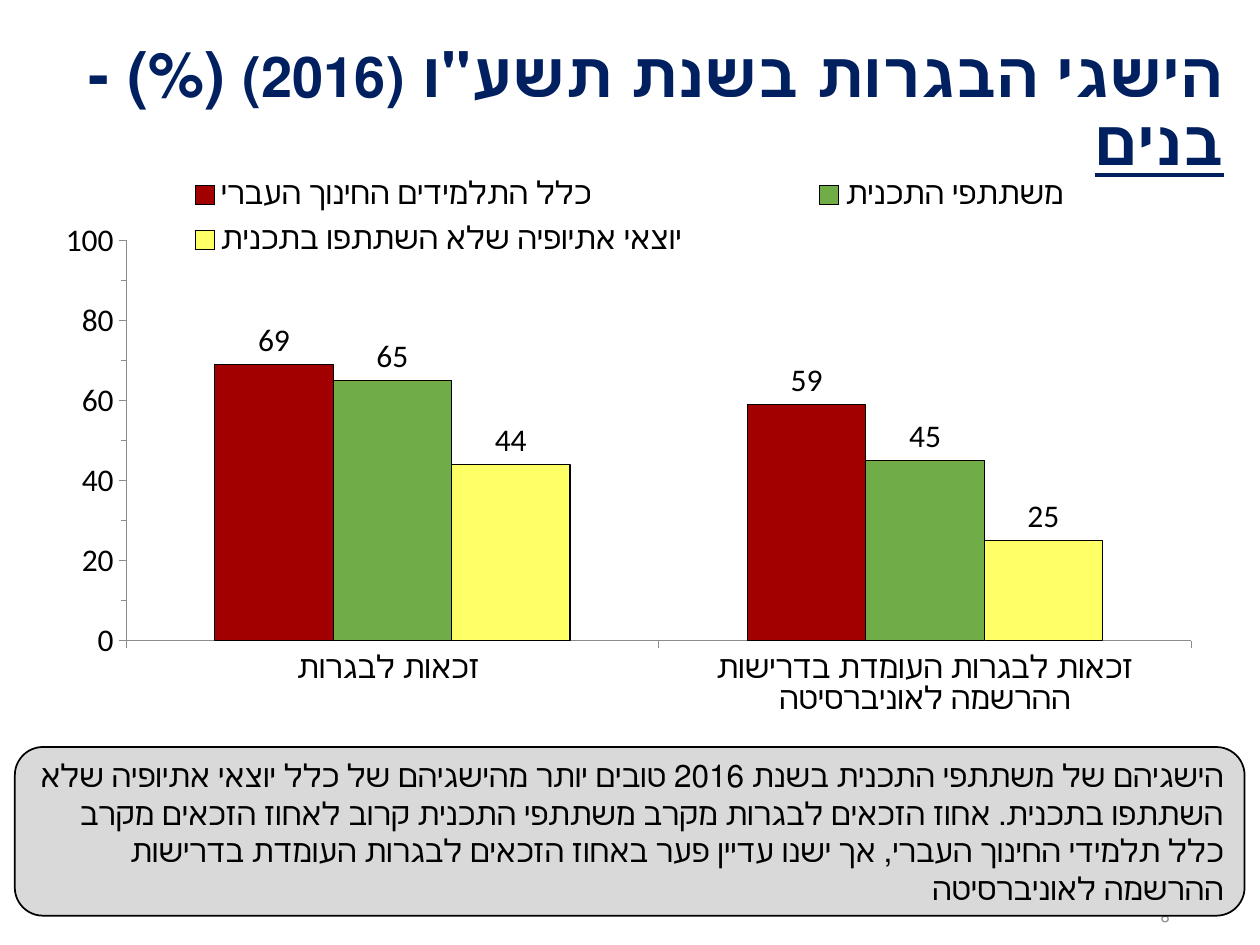
from pptx import Presentation
from pptx.chart.data import CategoryChartData
from pptx.dml.color import RGBColor
from pptx.enum import chart as charts, shapes, text
from pptx.oxml import parse_xml
from pptx.oxml.ns import nsdecls, qn
from pptx.util import Cm, Pt

COLORS = {"title": "002060", "ink": "000000", "axis": "8C8C8C", "number": "898989",
          "panel": "D9D9D9", "all": "A20000", "program": "70AD47", "others": "FFFF66"}

# Title runs: text, size, underlined
TITLE = [
    ("הישגי הבגרות בשנת תשע\"ו ", 36, False),
    ("(2016)", 32, False),
    (" (%) - ", 36, False),
    ("בנים", 36, True),
]
CATEGORIES = ["זכאות לבגרות ", "זכאות לבגרות העומדת בדרישות ההרשמה לאוניברסיטה"]
SERIES = [
    ("כלל התלמידים החינוך העברי", (69, 59), "all"),
    ("משתתפי התכנית", (65, 45), "program"),
    ("יוצאי אתיופיה שלא השתתפו בתכנית", (44, 25), "others"),
]
SUMMARY = ("הישגיהם של משתתפי התכנית בשנת 2016 טובים יותר מהישגיהם של כלל יוצאי אתיופיה "
           "שלא השתתפו בתכנית. אחוז הזכאים לבגרות מקרב משתתפי התכנית קרוב לאחוז הזכאים "
           "מקרב כלל תלמידי החינוך העברי, אך ישנו עדיין פער באחוז הזכאים לבגרות העומדת "
           "בדרישות ההרשמה לאוניברסיטה ")
PAGE_NUMBER = "8"

# Left, top, width, height in cm
CHART_BOX = (0.89, 3.12, 23.6, 11.53)
NUMBER_BOX = (18.11, 17.96, 5.72, 1.02)
SUMMARY_BOX = (0.3, 15.06, 24.79, 3.4)
TITLE_BOX = (0.1, 0.74, 24.82, 1.6)

# Left, top, width, height as shares of the chart
PLOT_LAYOUT = (0.07, 0.15, 0.91, 0.7)
LEGEND_LAYOUT = (0.02, 0.02, 0.96, 0.18)


def color(name):
    return RGBColor.from_string(COLORS[name])


def place(box):
    return [Cm(length) for length in box]


def style_font(font, size, name, color_name):
    font.size, font.name = Pt(size), name
    font.color.rgb = color(color_name)


def set_line(line, color_name, width):
    line.color.rgb = color(color_name)
    line.width = Pt(width)


def right_to_left(frame, anchor):
    frame.word_wrap = True
    frame.vertical_anchor = anchor
    paragraph = frame.paragraphs[0]
    paragraph.alignment = text.PP_ALIGN.RIGHT
    paragraph._p.get_or_add_pPr().set("rtl", "1")
    return paragraph


def manual_layout(box, inner=False):
    target = '<c:layoutTarget val="inner"/>' if inner else ""
    modes = '<c:xMode val="edge"/><c:yMode val="edge"/>'
    sizes = "".join(f'<c:{key} val="{value}"/>' for key, value in zip("xywh", box))
    return parse_xml(f'<c:layout {nsdecls("c")}><c:manualLayout>{target}{modes}{sizes}'
                     "</c:manualLayout></c:layout>")


def add_results_chart(slide):
    data = CategoryChartData(number_format="General")
    data.categories = CATEGORIES
    for name, values, _ in SERIES:
        data.add_series(name, values)
    chart = slide.shapes.add_chart(charts.XL_CHART_TYPE.COLUMN_CLUSTERED,
                                   *place(CHART_BOX), data).chart
    chart.has_title = False
    style_font(chart.font, 18, "Calibri", "ink")

    # Columns
    plot = chart.plots[0]
    plot.gap_width, plot.overlap = 150, 0
    plot.vary_by_categories = False
    for series, (_, _, fill) in zip(plot.series, SERIES):
        series.format.fill.solid()
        series.format.fill.fore_color.rgb = color(fill)
        set_line(series.format.line, "ink", 0.75)
        labels = series.data_labels
        labels.show_value = True
        labels.position = charts.XL_LABEL_POSITION.OUTSIDE_END
        style_font(labels.font, 18, "Calibri", "ink")

    # Axes
    for axis in (chart.category_axis, chart.value_axis):
        axis.has_major_gridlines = False
        axis.major_tick_mark = charts.XL_TICK_MARK.OUTSIDE
        style_font(axis.tick_labels.font, 18, "Calibri", "ink")
        set_line(axis.format.line, "axis", 0.5)
    scale = chart.value_axis
    scale.minimum_scale, scale.maximum_scale = 0, 100
    scale.major_unit, scale.minor_unit = 20, 10
    scale.minor_tick_mark = charts.XL_TICK_MARK.OUTSIDE

    # Legend and layout
    chart.has_legend = True
    legend = chart.legend
    legend.position = charts.XL_LEGEND_POSITION.TOP
    legend.include_in_layout = False
    style_font(legend.font, 18, "Calibri", "ink")
    for old in legend._element.findall(qn("c:layout")):
        legend._element.remove(old)
    legend._element.find(qn("c:legendPos")).addnext(manual_layout(LEGEND_LAYOUT))
    plot_area = chart._chartSpace.chart.plotArea
    for old in plot_area.findall(qn("c:layout")):
        plot_area.remove(old)
    plot_area.insert(0, manual_layout(PLOT_LAYOUT, inner=True))


def add_page_number(slide):
    frame = slide.shapes.add_textbox(*place(NUMBER_BOX)).text_frame
    paragraph = right_to_left(frame, text.MSO_ANCHOR.MIDDLE)
    paragraph.text = PAGE_NUMBER
    style_font(paragraph.font, 9, "Arial", "number")


def add_summary(slide):
    panel = slide.shapes.add_shape(shapes.MSO_SHAPE.ROUNDED_RECTANGLE, *place(SUMMARY_BOX))
    panel.shadow.inherit = False
    panel.fill.solid()
    panel.fill.fore_color.rgb = color("panel")
    set_line(panel.line, "ink", 1)
    paragraph = right_to_left(panel.text_frame, text.MSO_ANCHOR.MIDDLE)
    paragraph.text = SUMMARY
    style_font(paragraph.font, 18, "Calibri", "ink")


def add_title(slide):
    frame = slide.shapes.add_textbox(*place(TITLE_BOX)).text_frame
    paragraph = right_to_left(frame, text.MSO_ANCHOR.TOP)
    paragraph.line_spacing = 0.9
    for words, size, underlined in TITLE:
        run = paragraph.add_run()
        run.text = words
        run.font.bold = True
        if underlined:
            run.font.underline = True
        style_font(run.font, size, "Times New Roman", "title")


def main():
    presentation = Presentation()
    presentation.slide_width, presentation.slide_height = Cm(25.4), Cm(19.05)
    slide = presentation.slides.add_slide(presentation.slide_layouts[6])
    add_results_chart(slide)
    add_page_number(slide)
    add_summary(slide)
    add_title(slide)
    presentation.save("out.pptx")


if __name__ == "__main__":
    main()
